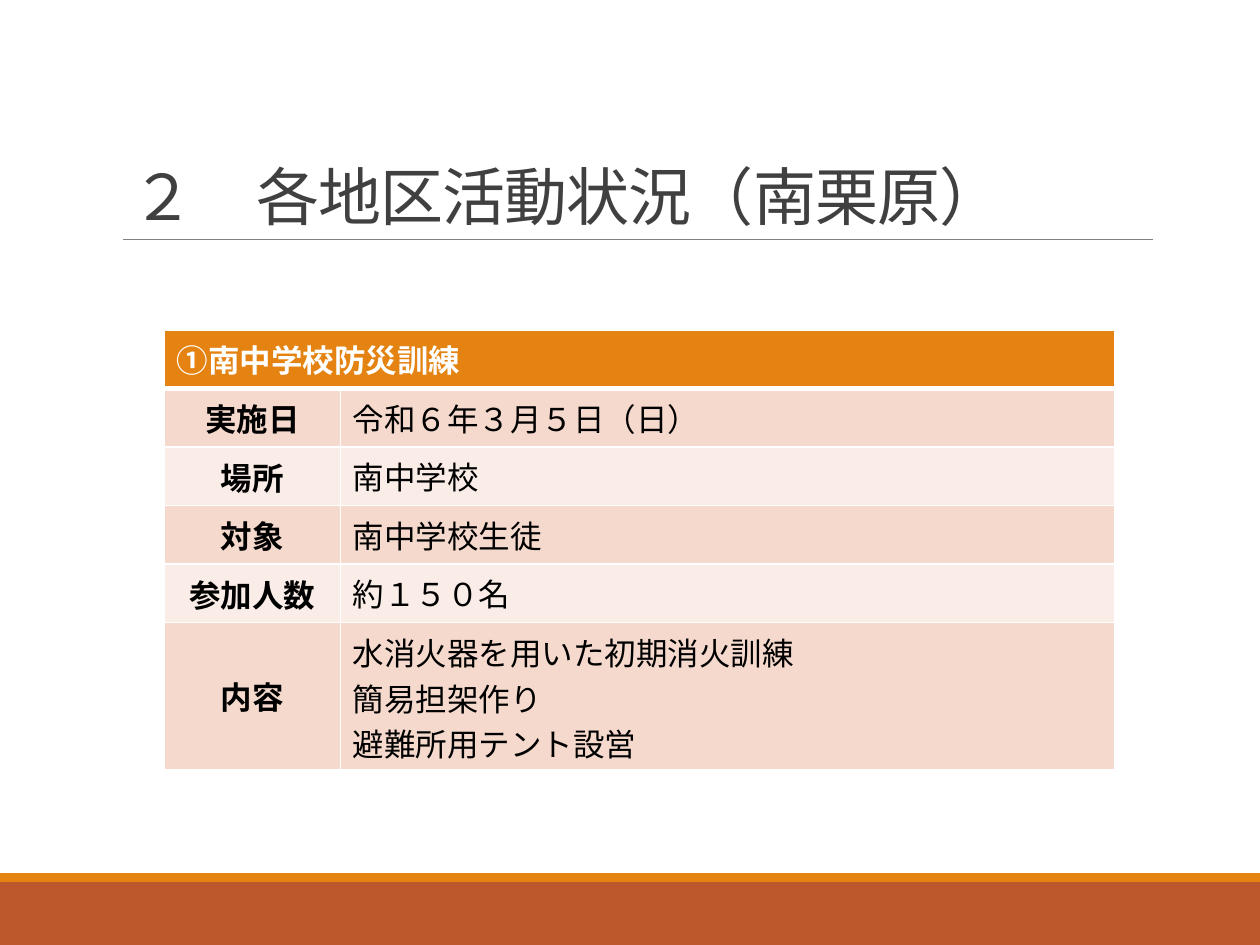
from lxml.etree import SubElement
from pptx import Presentation
from pptx.dml.color import RGBColor
from pptx.enum.lang import MSO_LANGUAGE_ID
from pptx.enum.shapes import MSO_CONNECTOR, MSO_SHAPE
from pptx.enum.text import MSO_ANCHOR, PP_ALIGN
from pptx.oxml.ns import qn
from pptx.util import Cm, Pt

RUST = RGBColor(0xBD, 0x58, 0x2C)
ORANGE = RGBColor(0xE4, 0x83, 0x12)
PEACH = RGBColor(0xF5, 0xD9, 0xCC)
PALE = RGBColor(0xFA, 0xED, 0xE7)
GRAY = RGBColor(0x80, 0x80, 0x80)
DARK = RGBColor(0x40, 0x40, 0x40)
BLACK = RGBColor(0, 0, 0)
WHITE = RGBColor(0xFF, 0xFF, 0xFF)

HEAD = "①南中学校防災訓練"
ROWS = [
    ("実施日", "令和６年３月５日（日）"),
    ("場所", "南中学校"),
    ("対象", "南中学校生徒"),
    ("参加人数", "約１５０名"),
    ("内容", "水消火器を用いた初期消火訓練\n簡易担架作り\n避難所用テント設営"),
]


def style(para, size, color, bold=False):
    """Set the font of one paragraph."""
    font = para.font
    font.name, font.size, font.bold = "Calibri", Pt(size), bold
    font.color.rgb = color
    font.language_id = MSO_LANGUAGE_ID.JAPANESE


def add_band(slide, left, top, width, height, color):
    """Draw a plain filled strip."""
    band = slide.shapes.add_shape(
        MSO_SHAPE.RECTANGLE, Cm(left), Cm(top), Cm(width), Cm(height))
    band.shadow.inherit = False
    band.fill.solid()
    band.fill.fore_color.rgb = color
    band.line.fill.background()


def add_footer(slide, left, top, width, height):
    """Place the rust footer with its thin orange edge on top."""
    edge = 0.18
    add_band(slide, left, top + edge, width, height - edge, RUST)
    add_band(slide, left, top, width, edge, ORANGE)


def add_title(slide, left, top, width, height, text):
    """Place the title and the rule under it."""
    base = Cm(top + height)
    rule = slide.shapes.add_connector(
        MSO_CONNECTOR.STRAIGHT, Cm(left + 0.07), base,
        Cm(left + width - 0.13), base)
    rule.line.color.rgb = GRAY
    rule.line.width = Pt(0.5)
    SubElement(rule._element.spPr, qn("a:effectLst"))

    box = slide.shapes.add_textbox(Cm(left), Cm(top), Cm(width), Cm(height))
    frame = box.text_frame
    frame.word_wrap = True
    frame.vertical_anchor = MSO_ANCHOR.BOTTOM
    para = frame.paragraphs[0]
    para.text = text
    para.line_spacing = 0.85
    style(para, 36, DARK)
    para._p.pPr.find(qn("a:defRPr")).set("spc", "-50")


def add_edges(cell, top, bottom):
    """Give a cell white borders of the given top and bottom widths."""
    props = cell._tc.get_or_add_tcPr()
    for side, width in zip("LRTB", (1, 1, top, bottom)):
        line = SubElement(props, qn(f"a:ln{side}"), w=str(Pt(width)))
        fill = SubElement(line, qn("a:solidFill"))
        SubElement(fill, qn("a:srgbClr"), val=str(WHITE))


def fill_cell(cell, text, fill, color, bold, center=False):
    """Write and paint one cell."""
    cell.fill.solid()
    cell.fill.fore_color.rgb = fill
    cell.text = text
    if center:
        cell.vertical_anchor = MSO_ANCHOR.MIDDLE
    for para in cell.text_frame.paragraphs:
        if center:
            para.alignment = PP_ALIGN.CENTER
        style(para, 18, color, bold)


def add_report(slide, left, top, width, height):
    """Place the table of the drill, with a taller last row."""
    count = len(ROWS) + 1
    table = slide.shapes.add_table(
        count, 2, Cm(left), Cm(top), Cm(width), Cm(height)).table
    label, step = 3.55, 1.18
    table.columns[0].width = Cm(label)
    table.columns[1].width = Cm(width - label)
    for idx, row in enumerate(table.rows):
        last = idx == count - 1
        row.height = Cm(height - step * idx if last else step)
        for cell in row.cells:
            add_edges(cell, 3 if idx == 1 else 1, 3 if idx == 0 else 1)

    table.cell(0, 0).merge(table.cell(0, 1))
    fill_cell(table.cell(0, 0), HEAD, ORANGE, WHITE, True)
    for idx, (name, value) in enumerate(ROWS, 1):
        fill = PEACH if idx % 2 else PALE
        fill_cell(table.cell(idx, 0), name, fill, BLACK, True, center=True)
        fill_cell(table.cell(idx, 1), value, fill, BLACK, False)


def main():
    """Build and save the slide."""
    deck = Presentation()
    deck.slide_width, deck.slide_height = Cm(25.4), Cm(19.05)
    slide = deck.slides.add_slide(deck.slide_layouts[6])
    add_footer(slide, 0, 17.6, 25.4, 1.45)
    add_title(slide, 2.41, 0.79, 20.96, 4.04, "２　各地区活動状況（南栗原）")
    add_report(slide, 3.31, 6.65, 19.17, 8.86)
    deck.save("out.pptx")


if __name__ == "__main__":
    main()
